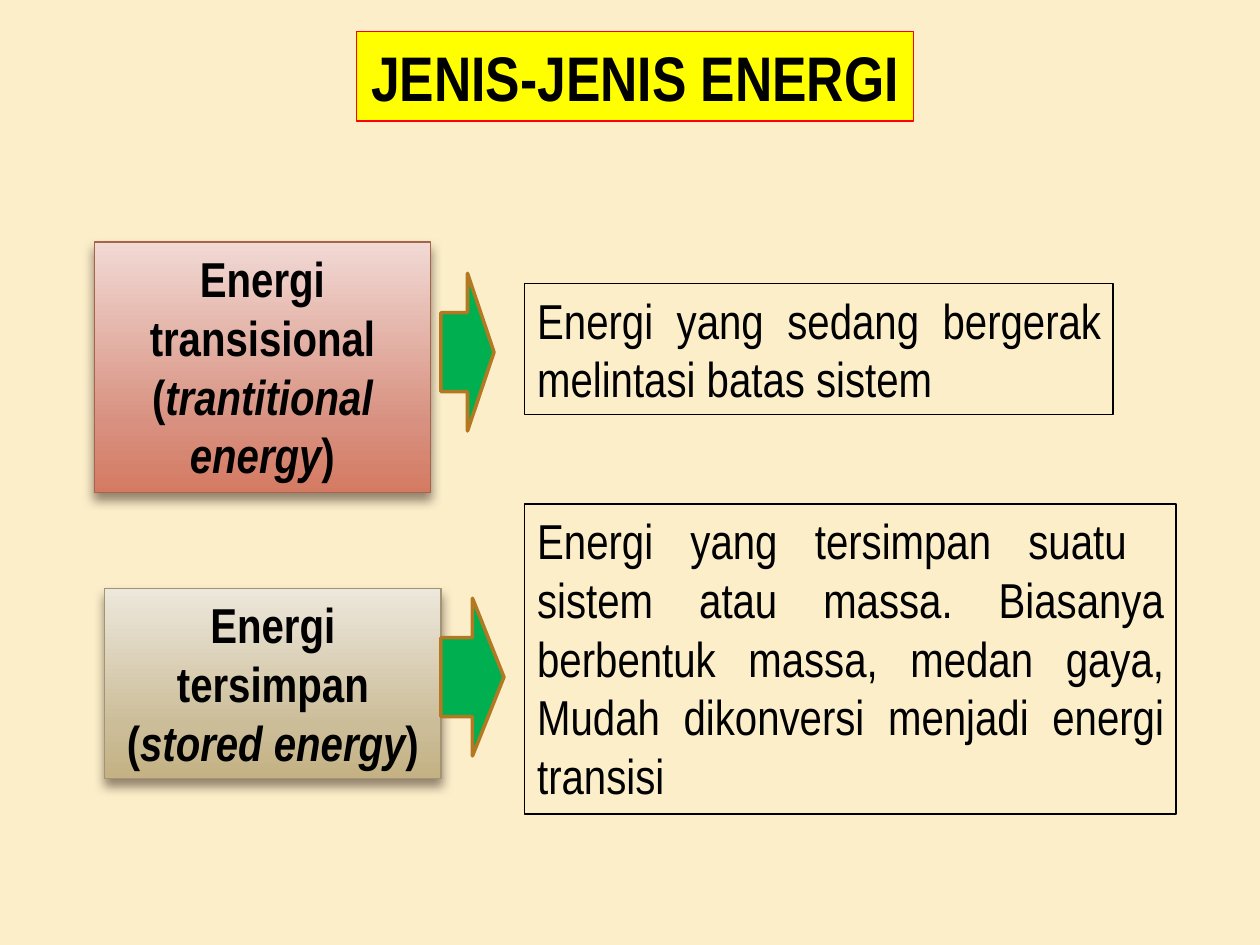
from typing import NamedTuple

import pptx
import pptx.dml.color
import pptx.enum.shapes
import pptx.enum.text
import pptx.oxml
import pptx.oxml.ns
import pptx.util

Cm = pptx.util.Cm
Pt = pptx.util.Pt
Align = pptx.enum.text.PP_ALIGN
Kind = pptx.enum.shapes.MSO_SHAPE

HUES = {
    "page": "FBEEC9", "ink": "000000", "title": "FFFF00", "edge": "FF0000",
    "arrow": "00B050", "rim": "B27822", "shade": "4E3B30",
    "red": "A5644E", "tan": "A19574",
}
FADES = {
    "red": {0: "F1D9D4", 72: "D89180", 100: "D47A62"},
    "tan": {0: "EDE8DC", 72: "CCBD99", 100: "C4B284"},
}
FRAME = {
    "word_wrap": True,
    "auto_size": pptx.enum.text.MSO_AUTO_SIZE.NONE,
    "vertical_anchor": pptx.enum.text.MSO_ANCHOR.TOP,
    "margin_left": Cm(0.25), "margin_right": Cm(0.25),
    "margin_top": Cm(0.13), "margin_bottom": Cm(0.13),
}


class Rect(NamedTuple):
    left: float
    top: float
    width: float
    height: float


class Energy(NamedTuple):
    name: str
    term: str
    note: str
    hue: str
    card: Rect
    arrow: Rect
    panel: Rect


KINDS = [
    Energy("Energi transisional", "trantitional energy",
           "Energi yang sedang bergerak melintasi batas sistem", "red",
           Rect(1.9, 4.88, 6.78, 5.05), Rect(8.89, 5.51, 1.07, 3.18),
           Rect(10.58, 5.72, 11.86, 2.64)),
    Energy("Energi tersimpan", "stored energy",
           "Energi yang tersimpan suatu  sistem atau massa. Biasanya "
           "berbentuk massa, medan gaya, Mudah dikonversi menjadi energi "
           "transisi", "tan",
           Rect(2.11, 11.86, 6.78, 3.84), Rect(8.89, 12.06, 1.27, 3.18),
           Rect(10.58, 10.16, 13.13, 6.25)),
]


def color(name: str) -> pptx.dml.color.RGBColor:
    return pptx.dml.color.RGBColor.from_string(HUES[name])


def apply(item, form: dict) -> None:
    for key, value in form.items():
        setattr(item, key, value)


def paint(shape, fill: str | None, line: str, width: float) -> None:
    if fill:
        shape.fill.solid()
        shape.fill.fore_color.rgb = color(fill)
    else:
        shape.fill.background()
    shape.line.color.rgb = color(line)
    shape.line.width = Pt(width)


def write(shape, runs: list[tuple[str, bool]], size: float,
          align: Align, bold: bool) -> None:
    """Fill the shape with one paragraph of (text, italic) runs."""
    apply(shape.text_frame, FRAME)
    para = shape.text_frame.paragraphs[0]
    para.alignment = align
    for text, slant in runs:
        run = para.add_run()
        run.text = text
        apply(run.font, {"name": "Arial Narrow", "size": Pt(size),
                         "bold": bold, "italic": slant})
        run.font.color.rgb = color("ink")


def draw(slide, kind: Kind, rect: Rect):
    shape = slide.shapes.add_shape(kind, *map(Cm, rect))
    shape.shadow.inherit = False
    return shape


def fade(shape, hue: str) -> None:
    """Give the shape a downward gradient and a soft shadow below."""
    space = pptx.oxml.ns.nsdecls("a")
    shape.fill.gradient()
    shape.fill.gradient_angle = 270
    props = shape._element.spPr
    stops = props.find(".//" + pptx.oxml.ns.qn("a:gsLst"))
    for stop in list(stops):
        stops.remove(stop)
    for part, code in FADES[hue].items():
        stops.append(pptx.oxml.parse_xml(
            f'<a:gs {space} pos="{part * 1000}"><a:srgbClr val="{code}"/></a:gs>'))
    props.find(pptx.oxml.ns.qn("a:effectLst")).append(pptx.oxml.parse_xml(
        f'<a:outerShdw {space} blurRad="{Pt(6)}" dist="{Pt(4)}" dir="5400000" '
        f'rotWithShape="0"><a:srgbClr val="{HUES["shade"]}">'
        '<a:alpha val="60000"/></a:srgbClr></a:outerShdw>'))


def add_kind(slide, item: Energy) -> None:
    card = draw(slide, Kind.RECTANGLE, item.card)
    paint(card, None, item.hue, 0.79)
    fade(card, item.hue)
    write(card, [(f"{item.name} (", False), (item.term, True), (")", False)],
          28, Align.CENTER, True)

    panel = draw(slide, Kind.RECTANGLE, item.panel)
    paint(panel, None, "ink", 0.75)
    write(panel, [(item.note, False)], 28, Align.JUSTIFY, False)

    arrow = draw(slide, Kind.RIGHT_ARROW, item.arrow)
    paint(arrow, "arrow", "rim", 2)


def main() -> None:
    deck = pptx.Presentation()
    apply(deck, {"slide_width": Cm(25.4), "slide_height": Cm(19.05)})
    slide = deck.slides.add_slide(deck.slide_layouts[5])
    slide.background.fill.solid()
    slide.background.fill.fore_color.rgb = color("page")

    title = slide.shapes.title
    place = Rect(*map(Cm, (7.19, 0.64, 11.23, 1.8)))
    apply(title, place._asdict())
    paint(title, "title", "edge", 0.75)
    write(title, [("JENIS-JENIS ENERGI", False)], 36, Align.CENTER, True)

    for item in KINDS:
        add_kind(slide, item)
    deck.save("out.pptx")


if __name__ == "__main__":
    main()
